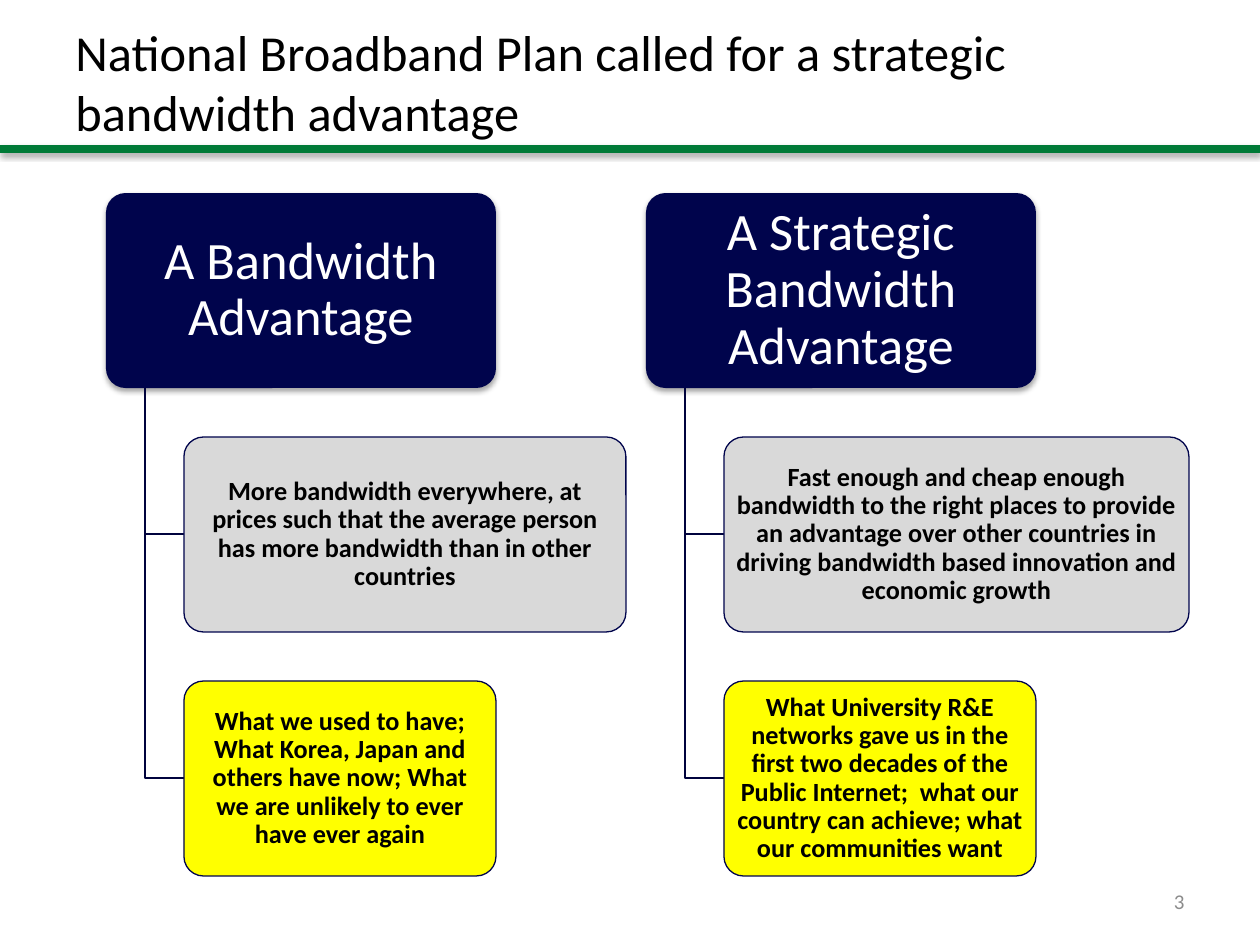
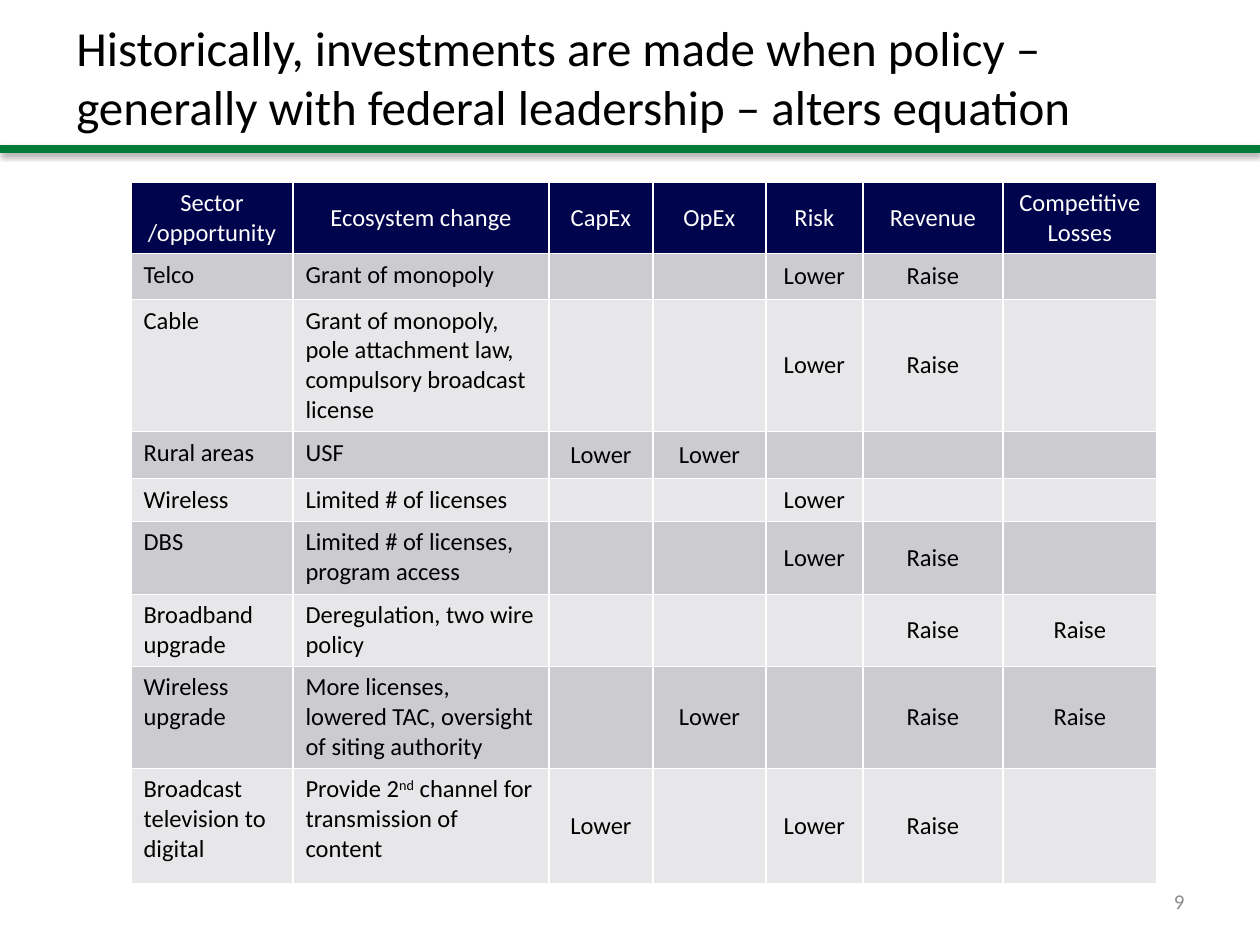
from lxml import etree
from pptx import Presentation
from pptx.dml.color import RGBColor
from pptx.enum.shapes import MSO_CONNECTOR, MSO_SHAPE
from pptx.enum.text import MSO_ANCHOR, PP_ALIGN
from pptx.oxml import parse_xml
from pptx.oxml.ns import nsdecls, qn
from pptx.util import Pt

EMU_PER_PX = 914400 / 126
SLIDE_WIDTH, SLIDE_HEIGHT = 1260, 945
FONT = "Calibri"

BLACK = RGBColor(0x00, 0x00, 0x00)
WHITE = RGBColor(0xFF, 0xFF, 0xFF)
GREEN = RGBColor(0x00, 0x7A, 0x37)
NAVY = RGBColor(0x00, 0x04, 0x4C)
BRANCH_NAVY = RGBColor(0x00, 0x03, 0x3D)
GREY = RGBColor(0xD9, 0xD9, 0xD9)
YELLOW = RGBColor(0xFF, 0xFF, 0x00)
NUMBER_GREY = RGBColor(0x8C, 0x8C, 0x8C)
BANDS = (RGBColor(0xCC, 0xCC, 0xD0), RGBColor(0xE7, 0xE7, 0xE9))

# Card grid
CARD_TOP, CARD_HEIGHT, CARD_STEP = 193, 195, 244
HEAD_WIDTH, BRANCH_INDENT, CHILD_INDENT = 390, 39, 78
NARROW_CARD = HEAD_WIDTH - CHILD_INDENT

# Each branch: left edge, heading, then (text, width, fill) for its cards
BRANCHES = [
    (106, "A Bandwidth Advantage", [
        ("More bandwidth everywhere, at prices such that the average person "
         "has more bandwidth than in other countries", 442, GREY),
        ("What we used to have; What Korea, Japan and others have now; "
         "What we are unlikely to ever have ever again", NARROW_CARD, YELLOW),
    ]),
    (646, "A Strategic Bandwidth Advantage", [
        ("Fast enough and cheap enough bandwidth to the right places to provide "
         "an advantage over other countries in driving bandwidth based "
         "innovation and economic growth", 465, GREY),
        ("What University R&E networks gave us in the first two decades of the "
         "Public Internet;  what our country can achieve; what our communities "
         "want", NARROW_CARD, YELLOW),
    ]),
]

# Text between carets is superscript
COLUMN_WIDTHS = [162, 256, 104, 113, 97, 140, 154]
ROW_HEIGHTS = [71, 46, 132, 47, 43, 73, 72, 102, 115]
POLICY_ROWS = [
    ["Sector /opportunity", "Ecosystem change", "CapEx", "OpEx", "Risk", "Revenue",
     "Competitive Losses"],
    ["Telco", "Grant of monopoly", "", "", "Lower", "Raise", ""],
    ["Cable", "Grant of monopoly, pole attachment law, compulsory broadcast license",
     "", "", "Lower", "Raise", ""],
    ["Rural areas", "USF", "Lower", "Lower", "", "", ""],
    ["Wireless", "Limited # of licenses", "", "", "Lower", "", ""],
    ["DBS", "Limited # of licenses, program access", "", "", "Lower", "Raise", ""],
    ["Broadband upgrade", "Deregulation, two wire policy", "", "", "", "Raise", "Raise"],
    ["Wireless upgrade", "More licenses, lowered TAC, oversight of siting authority",
     "", "Lower", "", "Raise", "Raise"],
    ["Broadcast television to digital",
     "Provide 2^nd^ channel for transmission of content",
     "Lower", "", "Lower", "Raise", ""],
]


def px(length):
    return round(length * EMU_PER_PX)


def box(*lengths):
    return [px(length) for length in lengths]


def format_run(run, size, color, bold=False):
    run.font.name = FONT
    run.font.size = Pt(size)
    run.font.color.rgb = color
    run.font.bold = bold


def set_text(text_frame, text, size, color, align, bold=False):
    text_frame.word_wrap = True
    text_frame.vertical_anchor = MSO_ANCHOR.MIDDLE
    text_frame.text = text
    paragraph = text_frame.paragraphs[0]
    paragraph.alignment = align
    format_run(paragraph.runs[0], size, color, bold)
    return paragraph


def set_effects(shape, shadow=False):
    """Replace the theme shadow by a soft one below, or by none."""
    effects = etree.SubElement(shape._element.spPr, qn("a:effectLst"))
    if shadow:
        effects.append(parse_xml(
            f'<a:outerShdw {nsdecls("a")} blurRad="40000" dist="23000" dir="5400000" '
            'rotWithShape="0"><a:srgbClr val="000000"><a:alpha val="35000"/>'
            '</a:srgbClr></a:outerShdw>'))


# Shared slide frame
def add_framed_slide(presentation, title, title_box, title_size, number):
    slide = presentation.slides.add_slide(presentation.slide_layouts[6])
    rule = slide.shapes.add_connector(MSO_CONNECTOR.STRAIGHT,
                                      *box(0, 149, SLIDE_WIDTH, 149))
    rule.line.color.rgb = GREEN
    rule.line.width = Pt(5)
    set_effects(rule, shadow=True)
    title_shape = slide.shapes.add_textbox(*box(*title_box))
    set_text(title_shape.text_frame, title, title_size, BLACK, PP_ALIGN.LEFT)
    number_shape = slide.shapes.add_textbox(*box(903, 876, 294, 50))
    set_text(number_shape.text_frame, number, 12, NUMBER_GREY, PP_ALIGN.RIGHT)
    return slide


# Branching cards
def add_card(slide, bounds, text, fill, size, color, heading=False):
    card = slide.shapes.add_shape(MSO_SHAPE.ROUNDED_RECTANGLE, *box(*bounds))
    card.adjustments[0] = 0.1
    card.fill.solid()
    card.fill.fore_color.rgb = fill
    if heading:
        card.line.fill.background()
    else:
        card.line.color.rgb = NAVY
        card.line.width = Pt(0.75)
    set_effects(card, shadow=heading)
    frame = card.text_frame
    frame.margin_left = frame.margin_right = px(8 if heading else 4)
    frame.margin_top = frame.margin_bottom = px(5 if heading else 3)
    paragraph = set_text(frame, text, size, color, PP_ALIGN.CENTER, bold=not heading)
    paragraph.line_spacing = 0.9


def add_elbow(slide, left, top, right, bottom):
    builder = slide.shapes.build_freeform(px(left), px(top))
    builder.add_line_segments([box(left, bottom), box(right, bottom)], close=False)
    elbow = builder.convert_to_shape()
    elbow.fill.background()
    elbow.line.color.rgb = BRANCH_NAVY
    elbow.line.width = Pt(0.75)
    set_effects(elbow)


def add_branch(slide, left, heading, cards):
    add_card(slide, (left, CARD_TOP, HEAD_WIDTH, CARD_HEIGHT), heading,
             NAVY, 30, WHITE, heading=True)
    child_left = left + CHILD_INDENT
    for level, (text, width, fill) in enumerate(cards, start=1):
        top = CARD_TOP + level * CARD_STEP
        add_elbow(slide, left + BRANCH_INDENT, CARD_TOP + CARD_HEIGHT,
                  child_left, top + CARD_HEIGHT // 2)
        add_card(slide, (child_left, top, width, CARD_HEIGHT), text, fill, 15, BLACK)


# Policy table
def set_borders(cell):
    properties = cell._tc.get_or_add_tcPr()
    for position, side in enumerate(("lnL", "lnR", "lnT", "lnB")):
        properties.insert(position, parse_xml(
            f'<a:{side} {nsdecls("a")} w="{Pt(1)}"><a:solidFill>'
            f'<a:srgbClr val="{WHITE}"/></a:solidFill></a:{side}>'))


def fill_cell(cell, text, fill, color, centred):
    cell.fill.solid()
    cell.fill.fore_color.rgb = fill
    set_borders(cell)
    paragraph = cell.text_frame.paragraphs[0]
    if centred:
        cell.vertical_anchor = MSO_ANCHOR.MIDDLE
        paragraph.alignment = PP_ALIGN.CENTER
    if not text:
        etree.SubElement(paragraph._p, qn("a:endParaRPr"), sz="1400")
        return
    for index, part in enumerate(text.split("^")):
        run = paragraph.add_run()
        run.text = part
        format_run(run, 14, color)
        if index % 2:
            run.font._element.set("baseline", "30000")


def add_policy_table(slide):
    frame = slide.shapes.add_table(
        len(ROW_HEIGHTS), len(COLUMN_WIDTHS),
        *box(131, 182, sum(COLUMN_WIDTHS), sum(ROW_HEIGHTS)))
    table = frame.table
    table.horz_banding = False
    for column, width in zip(table.columns, COLUMN_WIDTHS):
        column.width = px(width)
    for row_index, (row, height) in enumerate(zip(table.rows, ROW_HEIGHTS)):
        row.height = px(height)
        heading = row_index == 0
        fill = NAVY if heading else BANDS[(row_index - 1) % 2]
        color = WHITE if heading else BLACK
        for column_index, text in enumerate(POLICY_ROWS[row_index]):
            fill_cell(row.cells[column_index], text, fill, color,
                      centred=heading or column_index > 1)


def main():
    presentation = Presentation()
    presentation.slide_width = px(SLIDE_WIDTH)
    presentation.slide_height = px(SLIDE_HEIGHT)

    advantage_slide = add_framed_slide(
        presentation, "National Broadband Plan called for a strategic bandwidth advantage",
        (63, 38, 1134, 87), 28.8, "3")
    for left, heading, cards in BRANCHES:
        add_branch(advantage_slide, left, heading, cards)

    policy_slide = add_framed_slide(
        presentation, "Historically, investments are made when policy – generally with "
        "federal leadership – alters equation", (64, 33, 1133, 87), 28, "9")
    add_policy_table(policy_slide)

    presentation.save("out.pptx")


if __name__ == "__main__":
    main()
